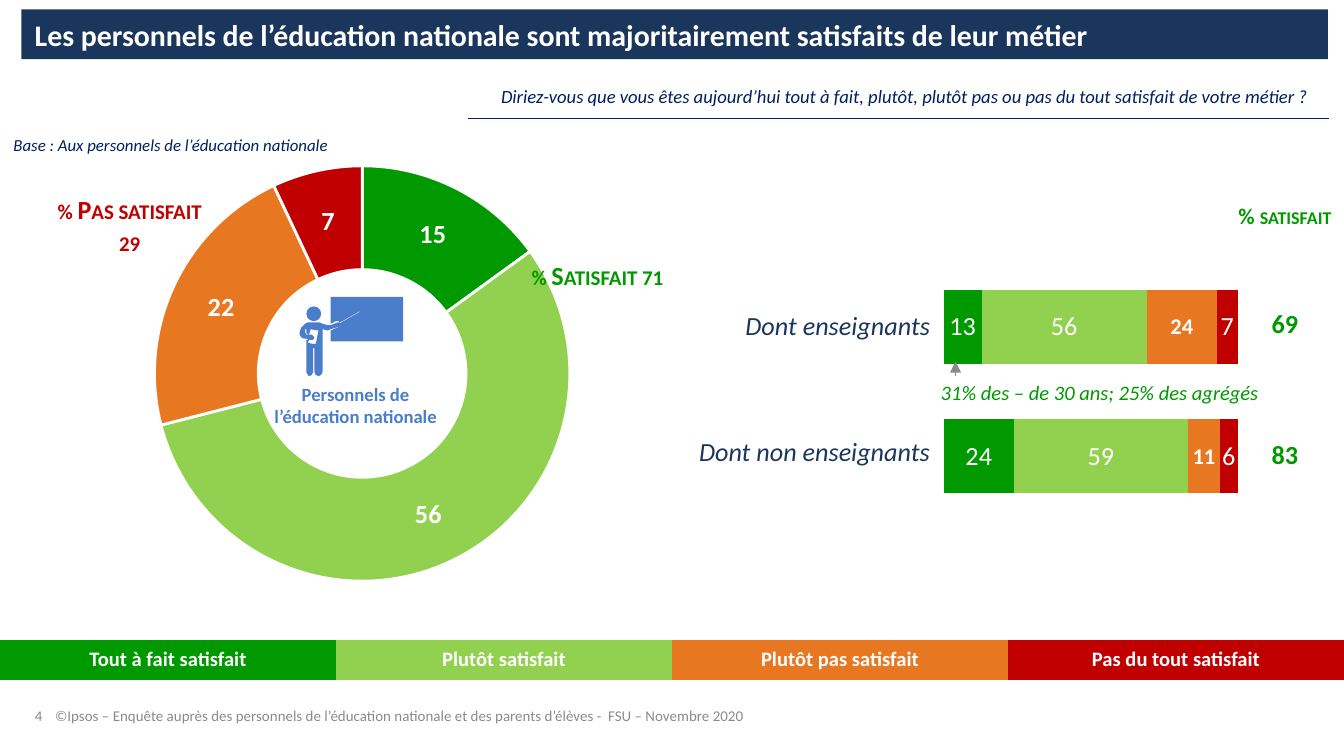
import pptx
import pptx.chart.data
import pptx.dml.color
import pptx.enum.chart
import pptx.enum.shapes
import pptx.enum.text
import pptx.oxml.ns
import pptx.util
from lxml import etree

Inches, Pt = pptx.util.Inches, pptx.util.Pt
RGBColor = pptx.dml.color.RGBColor
Align, Anchor = pptx.enum.text.PP_ALIGN, pptx.enum.text.MSO_ANCHOR
ChartType = pptx.enum.chart.XL_CHART_TYPE
qn = pptx.oxml.ns.qn

GREEN = RGBColor(0x00, 0x99, 0x00)
LIGHT_GREEN = RGBColor(0x92, 0xD0, 0x50)
ORANGE = RGBColor(0xE8, 0x77, 0x22)
RED = RGBColor(0xC0, 0x00, 0x00)
NAVY = RGBColor(0x1B, 0x36, 0x5D)
INK = RGBColor(0x00, 0x20, 0x60)
BLUE = RGBColor(0x4A, 0x7E, 0xCA)
GREY = RGBColor(0x88, 0x8B, 0x8D)
DARK = RGBColor(0x22, 0x22, 0x23)
WHITE = RGBColor(0xFF, 0xFF, 0xFF)
FONT = "Calibri"
NO_STYLE = "{2D5ABB26-0587-4C30-8999-92F81FD0307C}"

# Answer, colour, share of all staff, shares by group, bar label size, bar label bold
ANSWERS = [
    ("Tout à fait satisfait", GREEN, 15, (13, 24), 14, False),
    ("Plutôt satisfait", LIGHT_GREEN, 56, (56, 59), 14, False),
    ("Plutôt pas satisfait", ORANGE, 22, (24, 11), 12, True),
    ("Pas du tout satisfait", RED, 7, (7, 6), 14, False),
]
GROUPS = [("Dont enseignants", 2.25, "69"), ("Dont non enseignants", 3.19, "83")]

# Position and size in inches, text, format
CAPTIONS = [
    ((3.63, 0.47, 6.37, 0.49),
     "Diriez-vous que vous êtes aujourd’hui tout à fait, plutôt, plutôt pas ou pas du tout "
     "satisfait de votre métier\u00a0?", dict(size=10, color=INK, italic=True, anchor=Anchor.MIDDLE)),
    ((0.09, 1, 2.39, 0.15), "Base : Aux personnels de l’éducation nationale",
     dict(size=9, color=INK, italic=True, margins=(0.01, 0, 0, 0))),
    ((3.75, 1.84, 1.39, 0.41), "% Satisfait 71",
     dict(size=14, color=GREEN, bold=True, small=True, align=Align.CENTER, anchor=Anchor.MIDDLE)),
    ((0.27, 1.31, 1.39, 0.73), "% Pas satisfait 29",
     dict(size=14, color=RED, bold=True, small=True, align=Align.CENTER, anchor=Anchor.MIDDLE)),
    ((1.89, 2.8, 1.51, 0.44), "Personnels de l’éducation nationale",
     dict(size=10, color=BLUE, bold=True, align=Align.CENTER)),
    ((6.99, 2.83, 3.3, 0.19), "31% des – de 30 ans; 25% des agrégés",
     dict(size=11, color=GREEN, italic=True, margins=(0.01, 0, 0, 0))),
    ((0.31, 5.21, 7.39, 0.2),
     [("©", {"italic": True}),
      ("Ipsos – Enquête auprès des personnels de l’éducation nationale et des parents d’élèves -  "
       "FSU – Novembre 2020", {})], dict(size=8, color=GREY)),
    ((0.26, 5.13, 0.34, 0.26), "4",
     dict(size=8, color=GREY, anchor=Anchor.BOTTOM, margins=(0, 0, 0, 0), wrap=False, spacing=0.85)),
]

# Outlines in hundredths of an inch
BOARD = [(252, 239), (253, 239.5), (267, 231.5), (267.5, 232), (254, 240.5), (253, 243), (246, 246),
         (246, 254), (300, 254), (300, 221), (246, 221), (246, 241), (250, 239)]
TEACHER = [(226, 252), (228, 252), (230, 253), (233, 253), (234, 251), (232, 249), (228, 249),
           (227, 247), (227, 245), (228, 245), (228, 248), (230, 249), (231, 245), (237, 246),
           (235, 256), (233, 256), (229, 255), (230, 253), (228, 253), (228, 277), (228.6, 279),
           (230, 280), (232, 279), (233, 277), (233, 259), (234, 259), (234, 277), (235, 279),
           (237, 280), (239, 279), (240, 277), (240, 245), (244, 246), (246, 245), (253, 243),
           (253.5, 241), (253, 240), (251, 240), (246, 242), (244, 242), (240, 241), (238, 240),
           (229, 240), (227, 241), (224, 244), (223, 247), (223, 249), (224, 251)]


def style_font(font, size, color, bold=False, italic=False):
    font.name, font.size, font.bold, font.italic = FONT, Pt(size), bold, italic
    font.color.rgb = color


def write(frame, text, align=Align.LEFT, spacing=None, **style):
    """Fill a text frame with one paragraph, from a string or (text, style changes) spans."""
    para = frame.paragraphs[0]
    para.alignment = align
    if spacing:
        para.line_spacing = spacing
    for words, changes in [(text, {})] if isinstance(text, str) else text:
        look = {**style, **changes}
        small = look.pop("small", False)
        span = para.add_run()
        span.text = words
        style_font(span.font, **look)
        if small:
            span.font._element.set("cap", "small")


def set_margins(holder, margins):
    holder.margin_left, holder.margin_top, holder.margin_right, holder.margin_bottom = map(Inches, margins)


def add_caption(page, place, text, anchor=Anchor.TOP, margins=(0.1, 0.05, 0.1, 0.05), wrap=True, **style):
    frame = page.shapes.add_textbox(*map(Inches, place)).text_frame
    frame.word_wrap, frame.vertical_anchor = wrap, anchor
    set_margins(frame, margins)
    write(frame, text, **style)


def paint(shape, color):
    shape.shadow.inherit = False
    shape.fill.solid()
    shape.fill.fore_color.rgb = color
    shape.line.fill.background()


def add_outline(page, points, color):
    builder = page.shapes.build_freeform(*points[0], scale=Inches(0.01))
    builder.add_line_segments(points[1:], close=True)
    paint(builder.convert_to_shape(), color)


def add_line(page, start, end, color, width):
    line = page.shapes.add_connector(pptx.enum.shapes.MSO_CONNECTOR.STRAIGHT, *map(Inches, start + end))
    line.line.color.rgb, line.line.width = color, Pt(width)
    etree.SubElement(line._element.spPr, qn("a:effectLst"))
    return line


def add_plain_table(page, rows, columns, place):
    table = page.shapes.add_table(rows, columns, *map(Inches, place)).table
    table.first_row = table.horz_banding = False
    table._tbl.tblPr.find(qn("a:tableStyleId")).text = NO_STYLE
    for cell in table.iter_cells():
        cell.vertical_anchor = Anchor.MIDDLE
        cell.fill.background()
    return table


def add_chart(page, kind, place, series, plot_area):
    """Add a chart whose inner plot takes the given fractions of its frame."""
    data = pptx.chart.data.CategoryChartData()
    data.categories = ["1", "2", "3", "4"][:len(series[0])]
    for number, values in enumerate(series, 1):
        data.add_series(f"Series {number}", values)
    chart = page.shapes.add_chart(kind, *map(Inches, place), data).chart
    chart.has_legend = chart.has_title = False
    style_font(chart.font, 10, DARK)
    area = chart._chartSpace.chart.plotArea
    for old in area.findall(qn("c:layout")):
        area.remove(old)
    layout = etree.Element(qn("c:layout"))
    manual = etree.SubElement(layout, qn("c:manualLayout"))
    settings = [("layoutTarget", "inner"), ("xMode", "edge"), ("yMode", "edge")]
    for tag, value in settings + list(zip("xywh", plot_area)):
        etree.SubElement(manual, qn(f"c:{tag}")).set("val", str(value))
    area.insert(0, layout)
    return chart


def show_labels(labels, size, bold):
    labels.show_value = True
    labels.number_format, labels.number_format_is_linked = "#,##0", False
    style_font(labels.font, size, WHITE, bold)


def add_doughnut(page):
    chart = add_chart(page, ChartType.DOUGHNUT, (0.85, 1.1, 3.69, 3.36),
                      [[answer[2] for answer in ANSWERS]], (0.08, 0.04, 0.84, 0.92))
    plot = chart.plots[0]
    plot._element.find(qn("c:holeSize")).set("val", "65")
    plot.has_data_labels = True
    show_labels(plot.data_labels, 14, True)
    plot.data_labels.show_percentage = False
    for index, answer in enumerate(ANSWERS):
        look = plot.series[0].points[index].format
        look.fill.solid()
        look.fill.fore_color.rgb = answer[1]
        look.line.color.rgb, look.line.width = WHITE, Pt(1.5)


def add_group_bars(page):
    chart = add_chart(page, ChartType.BAR_STACKED_100, (6.17, 1.95, 3.04, 1.93),
                      [answer[3] for answer in ANSWERS], (0.28, 0, 0.72, 1))
    chart.category_axis.reverse_order = True
    chart.value_axis.maximum_scale = 1
    chart.value_axis.has_major_gridlines = False
    chart.category_axis.visible = chart.value_axis.visible = False
    plot = chart.plots[0]
    plot.gap_width, plot.overlap, plot.vary_by_categories = 75, 100, False
    for series, (_, color, _, _, size, bold) in zip(plot.series, ANSWERS):
        series.format.fill.solid()
        series.format.fill.fore_color.rgb = color
        show_labels(series.data_labels, size, bold)


def add_legend(page):
    table = add_plain_table(page, 1, len(ANSWERS), (0, 4.76, 10, 0.3))
    for cell, (name, color, *_) in zip(table.iter_cells(), ANSWERS):
        cell.fill.solid()
        cell.fill.fore_color.rgb = color
        write(cell.text_frame, name, size=11, color=WHITE, bold=True, align=Align.CENTER)


def add_totals(page):
    table = add_plain_table(page, 3, 1, (9.07, 1.29, 0.98, 2.58))
    heading = [("% ", {"size": 12}), ("satisfait", {"size": 12, "small": True})]
    texts = [heading] + [group[2] for group in GROUPS]
    for row, cell, text, height in zip(table.rows, table.iter_cells(), texts, (0.63, 0.98, 0.97)):
        row.height = Inches(height)
        set_margins(cell, (0, 0.01, 0, 0))
        write(cell.text_frame, text, size=14, color=GREEN, bold=True, align=Align.CENTER)


def main():
    deck = pptx.Presentation()
    deck.slide_width = Inches(10)
    deck.slide_height = deck.slide_width * 9 // 16
    page = deck.slides.add_slide(deck.slide_layouts[6])
    add_doughnut(page)
    banner = page.shapes.add_shape(pptx.enum.shapes.MSO_SHAPE.RECTANGLE, *map(Inches, (0.16, 0.07, 9.72, 0.37)))
    paint(banner, NAVY)
    write(banner.text_frame, "Les personnels de l’éducation nationale sont majoritairement satisfaits de leur métier",
          size=16, color=WHITE, bold=True)
    add_line(page, (3.48, 0.88), (9.89, 0.88), INK, 0.5)
    add_legend(page)
    add_outline(page, BOARD, BLUE)
    head = page.shapes.add_shape(pptx.enum.shapes.MSO_SHAPE.OVAL, *map(Inches, (2.28, 2.28, 0.11, 0.11)))
    paint(head, BLUE)
    add_outline(page, TEACHER, BLUE)
    add_group_bars(page)
    add_totals(page)
    for name, top, _ in GROUPS:
        add_caption(page, (5.06, top, 1.96, 0.34), name, size=14, color=NAVY, italic=True, align=Align.RIGHT)
    for place, text, style in CAPTIONS:
        add_caption(page, place, text, **style)
    arrow = add_line(page, (7.11, 2.8), (7.11, 2.69), GREY, 1)
    etree.SubElement(arrow.line._get_or_add_ln(), qn("a:tailEnd")).set("type", "triangle")
    deck.save("out.pptx")


if __name__ == "__main__":
    main()
